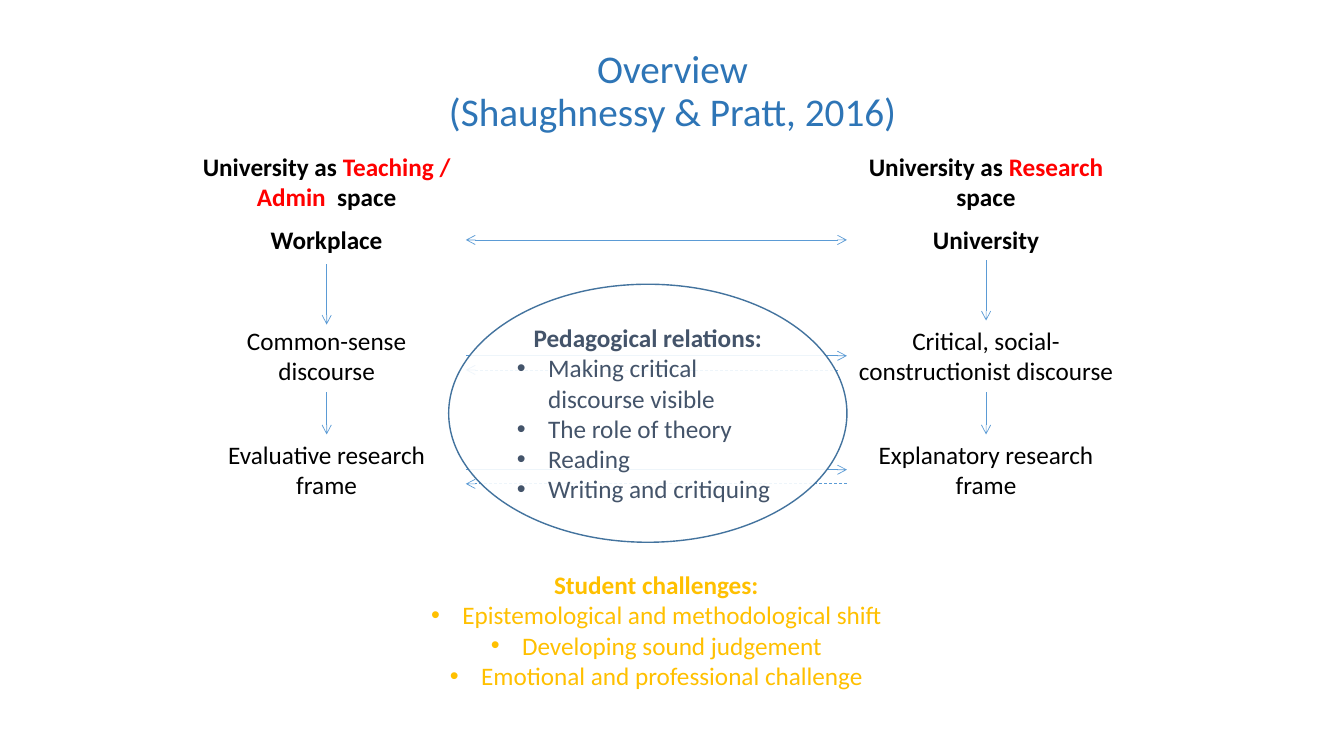
from lxml import etree
from pptx import Presentation
from pptx.dml.color import RGBColor
from pptx.enum.dml import MSO_LINE
from pptx.enum.shapes import MSO_CONNECTOR, MSO_SHAPE
from pptx.enum.text import MSO_ANCHOR, MSO_AUTO_SIZE, PP_ALIGN
from pptx.oxml.ns import qn
from pptx.util import Inches, Pt

TITLE_BLUE = RGBColor(0x2E, 0x75, 0xB6)
ARROW_BLUE = RGBColor(0x5B, 0x9B, 0xD5)
OUTLINE_BLUE = RGBColor(0x43, 0x73, 0x9E)
SLATE = RGBColor(0x44, 0x54, 0x6A)
GOLD = RGBColor(0xFF, 0xC0, 0x00)
RED = RGBColor(0xFF, 0x00, 0x00)
BLACK = RGBColor(0x00, 0x00, 0x00)
WHITE = RGBColor(0xFF, 0xFF, 0xFF)

CENTER, LEFT = PP_ALIGN.CENTER, PP_ALIGN.LEFT
MIDDLE = MSO_ANCHOR.MIDDLE
FIT_SHAPE, NO_FIT = MSO_AUTO_SIZE.SHAPE_TO_FIT_TEXT, MSO_AUTO_SIZE.NONE
DASH = MSO_LINE.DASH
STRAIGHT = MSO_CONNECTOR.STRAIGHT
OVAL = MSO_SHAPE.OVAL

FONT = "Calibri"
COLUMN_WIDTH = 2.76
WORKPLACE_LEFT, UNIVERSITY_LEFT = 1.86, 8.4
WORKPLACE_RIGHT = WORKPLACE_LEFT + COLUMN_WIDTH
WORKPLACE_MID = WORKPLACE_LEFT + COLUMN_WIDTH / 2
UNIVERSITY_MID = UNIVERSITY_LEFT + COLUMN_WIDTH / 2


def add_run(p, text, color, bold=False, size=18):
    r = p.add_run()
    r.text = text
    r.font.name = FONT
    r.font.size = Pt(size)
    r.font.bold = bold
    r.font.color.rgb = color


def add_bullet(p):
    pPr = p._p.get_or_add_pPr()
    pPr.set("marL", str(Inches(0.31)))
    pPr.set("indent", str(Inches(-0.31)))
    etree.SubElement(pPr, qn("a:buFont")).set("typeface", "Arial")
    etree.SubElement(pPr, qn("a:buChar")).set("char", "•")


def add_headed_list(tf, heading, items, color, item_align):
    p = tf.paragraphs[0]
    p.alignment = CENTER
    add_run(p, heading, color, bold=True)
    for item in items:
        p = tf.add_paragraph()
        p.alignment = item_align
        add_bullet(p)
        add_run(p, item, color)


def add_text_box(s, left, top, width, height):
    tf = s.shapes.add_textbox(Inches(left), Inches(top),
                              Inches(width), Inches(height)).text_frame
    tf.word_wrap = True
    tf.auto_size = FIT_SHAPE
    return tf


def add_label(s, left, top, height, runs, bold=False):
    """Centred column text; runs is a list of (text, color)."""
    p = add_text_box(s, left, top, COLUMN_WIDTH, height).paragraphs[0]
    p.alignment = CENTER
    for text, color in runs:
        add_run(p, text, color, bold)


def add_arrow(s, x1, y1, x2, y2, dashed=False, both_ends=False):
    line = s.shapes.add_connector(STRAIGHT, Inches(x1), Inches(y1),
                                  Inches(x2), Inches(y2))
    line.line.color.rgb = ARROW_BLUE
    line.line.width = Pt(0.5)
    if dashed:
        line.line.dash_style = DASH
    ln = line.line._get_or_add_ln()
    for end in ("a:headEnd", "a:tailEnd") if both_ends else ("a:tailEnd",):
        etree.SubElement(ln, qn(end)).set("type", "arrow")
    etree.SubElement(line._element.spPr, qn("a:effectLst"))


def add_title(s):
    title = s.shapes.title
    title.left, title.top = Inches(0.92), Inches(0.4)
    title.width, title.height = Inches(11.5), Inches(1.03)
    tf = title.text_frame
    tf.auto_size = NO_FIT
    tf.vertical_anchor = MIDDLE
    p = tf.paragraphs[0]
    p.alignment = CENTER
    p.line_spacing = 0.9
    add_run(p, "Overview", TITLE_BLUE, size=28)
    p.add_line_break()
    add_run(p, "(Shaughnessy & Pratt, 2016)", TITLE_BLUE, size=28)


def add_pedagogy_ellipse(s):
    sp = s.shapes.add_shape(OVAL, Inches(4.45), Inches(2.82),
                            Inches(3.95), Inches(2.56))
    sp.shadow.inherit = False
    sp.fill.solid()
    sp.fill.fore_color.rgb = WHITE
    white = sp._element.spPr.find(qn("a:solidFill")).find(qn("a:srgbClr"))
    etree.SubElement(white, qn("a:alpha")).set("val", "90000")
    sp.line.color.rgb = OUTLINE_BLUE
    sp.line.width = Pt(1)
    tf = sp.text_frame
    tf.word_wrap = True
    tf.vertical_anchor = MIDDLE
    add_headed_list(tf, "Pedagogical relations:",
                    ["Making critical discourse visible", "The role of theory",
                     "Reading", "Writing and critiquing"], SLATE, LEFT)


def add_column(s, left, space_runs, place, discourse, frame):
    add_label(s, left, 1.45, 0.71, space_runs, bold=True)
    add_label(s, left, 2.18, 0.4, [(place, BLACK)], bold=True)
    add_label(s, left, 3.18, 0.71, [(discourse, BLACK)])
    add_label(s, left, 4.31, 0.71, [(frame, BLACK)])


def main():
    prs = Presentation()
    prs.slide_width, prs.slide_height = Inches(13.33), Inches(7.5)
    s = prs.slides.add_slide(prs.slide_layouts[5])
    add_title(s)

    add_column(s, WORKPLACE_LEFT,
               [("University as ", BLACK), ("Teaching / Admin ", RED), (" space", BLACK)],
               "Workplace", "Common-sense discourse", "Evaluative research frame")
    add_column(s, UNIVERSITY_LEFT,
               [("University as ", BLACK), ("Research", RED), (" space", BLACK)],
               "University", "Critical, social-constructionist discourse",
               "Explanatory research frame")

    for x, top in ((WORKPLACE_MID, 2.62), (UNIVERSITY_MID, 2.58)):
        add_arrow(s, x, top, x, top + 0.6)
        add_arrow(s, x, 3.89, x, 4.31)

    add_arrow(s, WORKPLACE_RIGHT, 2.38, UNIVERSITY_LEFT, 2.38, both_ends=True)
    for y, return_start in ((3.53, 8.31), (4.66, UNIVERSITY_LEFT)):
        add_arrow(s, WORKPLACE_RIGHT, y, UNIVERSITY_LEFT, y)
        add_arrow(s, return_start, y + 0.14, WORKPLACE_RIGHT, y + 0.14, dashed=True)

    add_headed_list(add_text_box(s, 4.07, 5.6, 4.88, 1.31), "Student challenges:",
                    ["Epistemological and methodological shift",
                     "Developing sound judgement",
                     "Emotional and professional challenge"], GOLD, CENTER)
    add_pedagogy_ellipse(s)
    prs.save("out.pptx")


if __name__ == "__main__":
    main()
